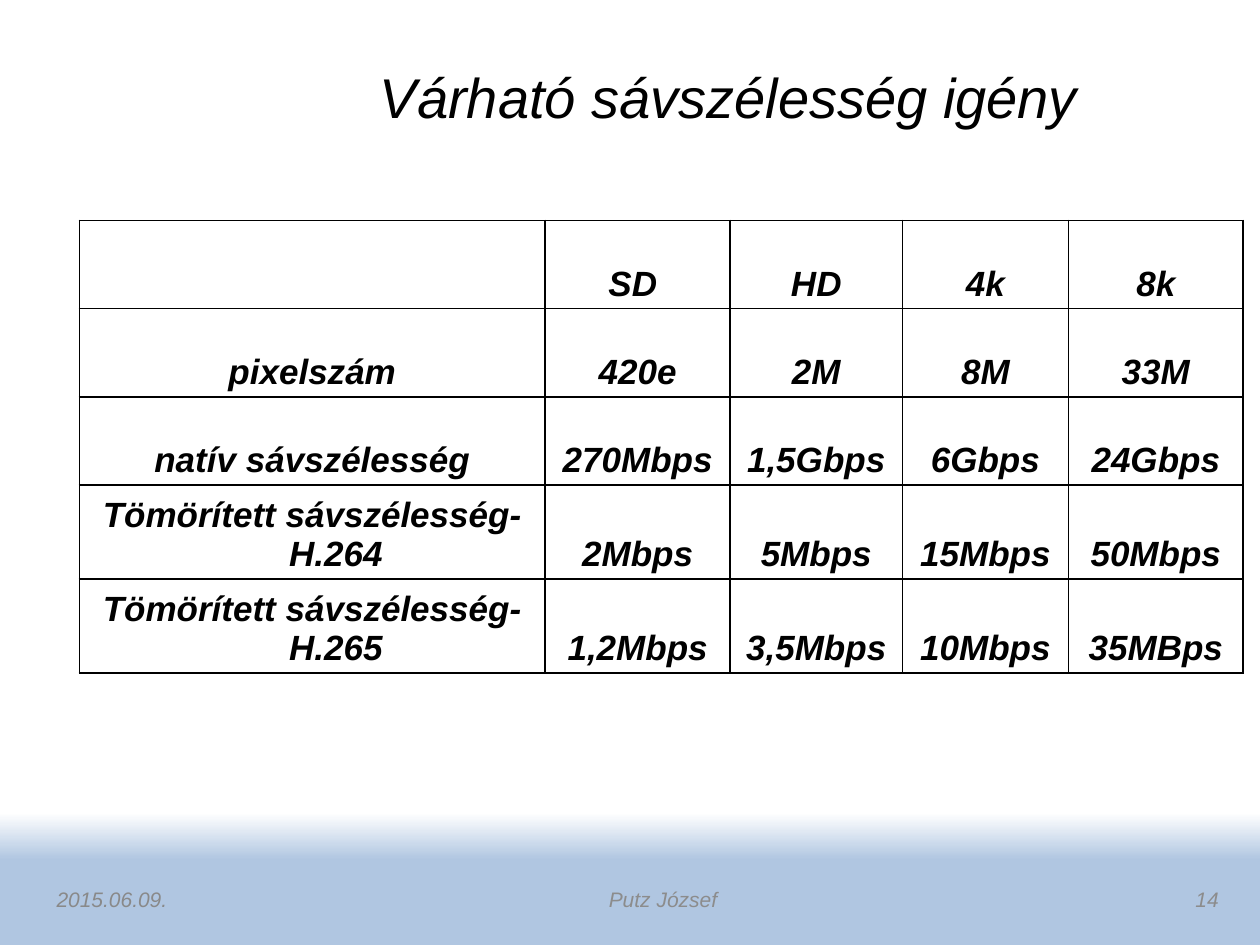
import pptx
import pptx.dml.color
import pptx.enum.text
import pptx.oxml
import pptx.oxml.ns
import pptx.util
from dataclasses import dataclass

Cm = pptx.util.Cm
Pt = pptx.util.Pt
ALIGN = pptx.enum.text.PP_ALIGN
ANCHOR = pptx.enum.text.MSO_ANCHOR


@dataclass(frozen=True)
class Theme:
    font: str = "Arial"
    ink: str = "000000"
    date: str = "898989"
    footer: str = "8C8C8C"
    sky: str = "FFFFFF"
    band: str = "B0C6E1"
    title_size: int = 32
    table_size: int = 20
    footer_size: int = 12
    border: int = 1


THEME = Theme()

COLUMN_WIDTHS = [9.39, 3.73, 3.47, 3.35, 3.52]
ROW_HEIGHT = 1.78
HANGING_INDENT = 0.95
ROWS = [
    ["", "SD ", "HD", "4k", "8k"],
    ["pixelszám", "420e", "2M", "8M", "33M"],
    ["natív sávszélesség", "270Mbps", "1,5Gbps", "6Gbps", "24Gbps"],
    ["Tömörített sávszélesség- H.264", "2Mbps", "5Mbps", "15Mbps", "50Mbps"],
    ["Tömörített sávszélesség- H.265", "1,2Mbps", "3,5Mbps", "10Mbps", "35MBps"],
]


def apply(target, values):
    for name, value in values.items():
        setattr(target, name, value)


def write(paragraph, text, size, color, align, bold=False):
    run = paragraph.add_run()
    run.text = text
    paragraph.alignment = align
    apply(run.font, {"name": THEME.font, "size": Pt(size), "bold": bold, "italic": True})
    run.font.color.rgb = pptx.dml.color.RGBColor.from_string(color)


def paint_background(slide):
    """White page that fades into a blue band at the foot."""
    fill = slide.background.fill
    fill.gradient()
    fill.gradient_angle = 270
    stops = slide.background._cSld.find(".//" + pptx.oxml.ns.qn("a:gsLst"))
    for stop in list(stops):
        stops.remove(stop)
    for percent, color in [(0, THEME.sky), (86, THEME.sky), (91, THEME.band), (100, THEME.band)]:
        stops.append(pptx.oxml.parse_xml(
            f'<a:gs {pptx.oxml.ns.nsdecls("a")} pos="{percent * 1000}">'
            f'<a:srgbClr val="{color}"/></a:gs>'))


def add_text(slide, text, box, size, color, align):
    shape = slide.shapes.add_textbox(*map(Cm, box))
    frame = shape.text_frame
    apply(frame, {"word_wrap": True, "vertical_anchor": ANCHOR.MIDDLE})
    write(frame.paragraphs[0], text, size, color, align)


def add_borders(cell):
    properties = cell._tc.get_or_add_tcPr()
    for side in "LRTB":
        properties.append(pptx.oxml.parse_xml(
            f'<a:ln{side} {pptx.oxml.ns.nsdecls("a")} w="{Pt(THEME.border)}">'
            f'<a:solidFill><a:srgbClr val="{THEME.ink}"/></a:solidFill></a:ln{side}>'))


def fill_cell(cell, text):
    add_borders(cell)
    cell.fill.background()
    apply(cell, {"vertical_anchor": ANCHOR.BOTTOM,
                 "margin_top": Cm(0.1), "margin_bottom": Cm(0.1)})
    if text:
        paragraph = cell.text_frame.paragraphs[0]
        indents = paragraph._p.get_or_add_pPr()
        indents.set("marL", str(Cm(HANGING_INDENT)))
        indents.set("indent", str(-Cm(HANGING_INDENT)))
        write(paragraph, text, THEME.table_size, THEME.ink, ALIGN.CENTER, bold=True)


def add_bandwidth_table(slide, left, top):
    frame = slide.shapes.add_table(
        len(ROWS), len(COLUMN_WIDTHS), Cm(left), Cm(top),
        Cm(sum(COLUMN_WIDTHS)), Cm(ROW_HEIGHT * len(ROWS)))
    table = frame.table
    apply(table, {"first_row": False, "horz_banding": False})
    for column, width in zip(table.columns, COLUMN_WIDTHS):
        column.width = Cm(width)
    for row, texts in zip(table.rows, ROWS):
        row.height = Cm(ROW_HEIGHT)
        for cell, text in zip(row.cells, texts):
            fill_cell(cell, text)


def main():
    presentation = pptx.Presentation()
    apply(presentation, {"slide_width": Cm(25.4), "slide_height": Cm(19.05)})
    slide = presentation.slides.add_slide(presentation.slide_layouts[6])
    paint_background(slide)
    add_text(slide, "Várható sávszélesség igény", (3.99, 0.76, 21.41, 2.34),
             THEME.title_size, THEME.ink, ALIGN.CENTER)
    add_bandwidth_table(slide, 1.6, 4.44)
    for text, box, color, align in [
        ("2015.06.09.", (0.89, 17.73, 3.71, 0.79), THEME.date, ALIGN.LEFT),
        ("Putz József", (10.11, 17.83, 4.6, 0.61), THEME.footer, ALIGN.RIGHT),
        ("14", (23.42, 17.73, 1.4, 0.79), THEME.footer, ALIGN.RIGHT),
    ]:
        add_text(slide, text, box, THEME.footer_size, color, align)
    presentation.save("out.pptx")


if __name__ == "__main__":
    main()
